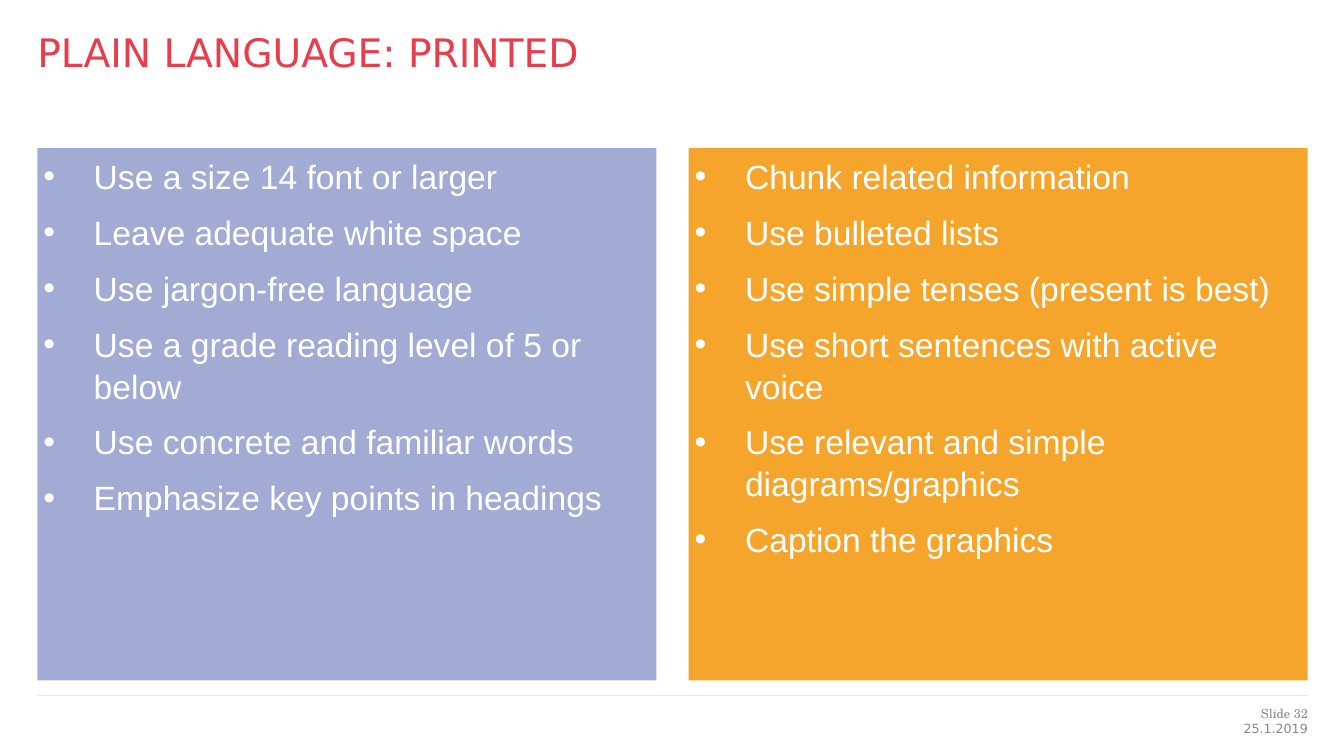
from lxml.etree import SubElement
from pptx import Presentation
from pptx.dml.color import RGBColor
from pptx.enum.shapes import MSO_CONNECTOR, MSO_SHAPE
from pptx.enum.text import MSO_ANCHOR, PP_ALIGN
from pptx.oxml.ns import qn
from pptx.util import Inches, Pt

TITLE = "PLAIN LANGUAGE: PRINTED"
PANELS = [
    ("blue", [
        "Use a size 14 font or larger",
        "Leave adequate white space",
        "Use jargon-free language",
        "Use a grade reading level of 5 or below",
        "Use concrete and familiar words",
        "Emphasize key points in headings",
    ]),
    ("orange", [
        "Chunk related information",
        "Use bulleted lists",
        "Use simple tenses (present is best)",
        "Use short sentences with active voice",
        "Use relevant and simple diagrams/graphics",
        "Caption the graphics",
    ]),
]
FOOTER = [("Slide 32", "TeX Gyre Schola", 7, 0.14),
          ("25.1.2019", "DejaVu Sans", 7.15, 0.2)]
COLORS = {"red": "E63E4D", "blue": "A1ABD3", "orange": "F5A52B",
          "white": "FFFFFF", "gray": "898989", "rule": "262626"}

WIDE, HIGH = 13.33, 7.5
LEFT, RIGHT, GAP = 0.37, 12.97, 0.32
SPAN = RIGHT - LEFT
COL = (SPAN - GAP) / 2


def color(name):
    return RGBColor.from_string(COLORS[name])


def set_font(para, face, size, name):
    para.font.name = face
    para.font.size = Pt(size)
    para.font.color.rgb = color(name)


def set_frame(shape, inset):
    frame = shape.text_frame
    frame.word_wrap = True
    frame.vertical_anchor = MSO_ANCHOR.TOP
    frame.margin_left = frame.margin_right = Inches(inset)
    frame.margin_top = frame.margin_bottom = Inches(inset)
    return frame


def add_text(slide, box, text, face, size, name, align):
    shape = slide.shapes.add_textbox(*map(Inches, box))
    para = set_frame(shape, 0).paragraphs[0]
    para.text = text
    para.alignment = align
    set_font(para, face, size, name)


def add_bullet(para):
    props = para._p.get_or_add_pPr()
    props.set("marL", str(Inches(0.5)))
    props.set("indent", str(-Inches(0.5)))
    tint = SubElement(props, qn("a:buClr"))
    SubElement(tint, qn("a:srgbClr"), val=COLORS["white"])
    SubElement(props, qn("a:buFont"), typeface="Arial")
    SubElement(props, qn("a:buChar"), char="•")


def add_panel(slide, index, name, items):
    box = LEFT + index * (COL + GAP), 1.47, COL, 5.28
    panel = slide.shapes.add_shape(MSO_SHAPE.RECTANGLE, *map(Inches, box))
    panel.shadow.inherit = False
    panel.fill.solid()
    panel.fill.fore_color.rgb = color(name)
    panel.line.fill.background()
    frame = set_frame(panel, 0.06)
    for row, item in enumerate(items):
        para = frame.add_paragraph() if row else frame.paragraphs[0]
        para.text = item
        add_bullet(para)
        para.alignment = PP_ALIGN.LEFT
        para.line_spacing = 1.04
        para.space_before = Pt(10 if row else 0)
        set_font(para, "Arial", 24, "white")


def add_rule(slide, top):
    ends = map(Inches, (LEFT, top, RIGHT, top))
    rule = slide.shapes.add_connector(MSO_CONNECTOR.STRAIGHT, *ends)
    rule.line.width = Pt(0.25)
    rule.line.color.rgb = color("rule")
    props = rule._element.spPr
    tint = props.find(".//" + qn("a:srgbClr"))
    SubElement(tint, qn("a:alpha"), val="31000")
    SubElement(props, qn("a:effectLst"))


def main():
    deck = Presentation()
    deck.slide_width, deck.slide_height = Inches(WIDE), Inches(HIGH)
    slide = deck.slides.add_slide(deck.slide_layouts[6])
    add_rule(slide, 6.9)
    add_text(slide, (LEFT, 0.28, SPAN, 0.94), TITLE,
             "DejaVu Sans", 28, "red", PP_ALIGN.LEFT)
    for text, face, top, tall in FOOTER:
        add_text(slide, (RIGHT - 1.85, top, 1.85, tall), text,
                 face, 9, "gray", PP_ALIGN.RIGHT)
    for index, (name, items) in enumerate(PANELS):
        add_panel(slide, index, name, items)
    deck.save("out.pptx")


if __name__ == "__main__":
    main()
